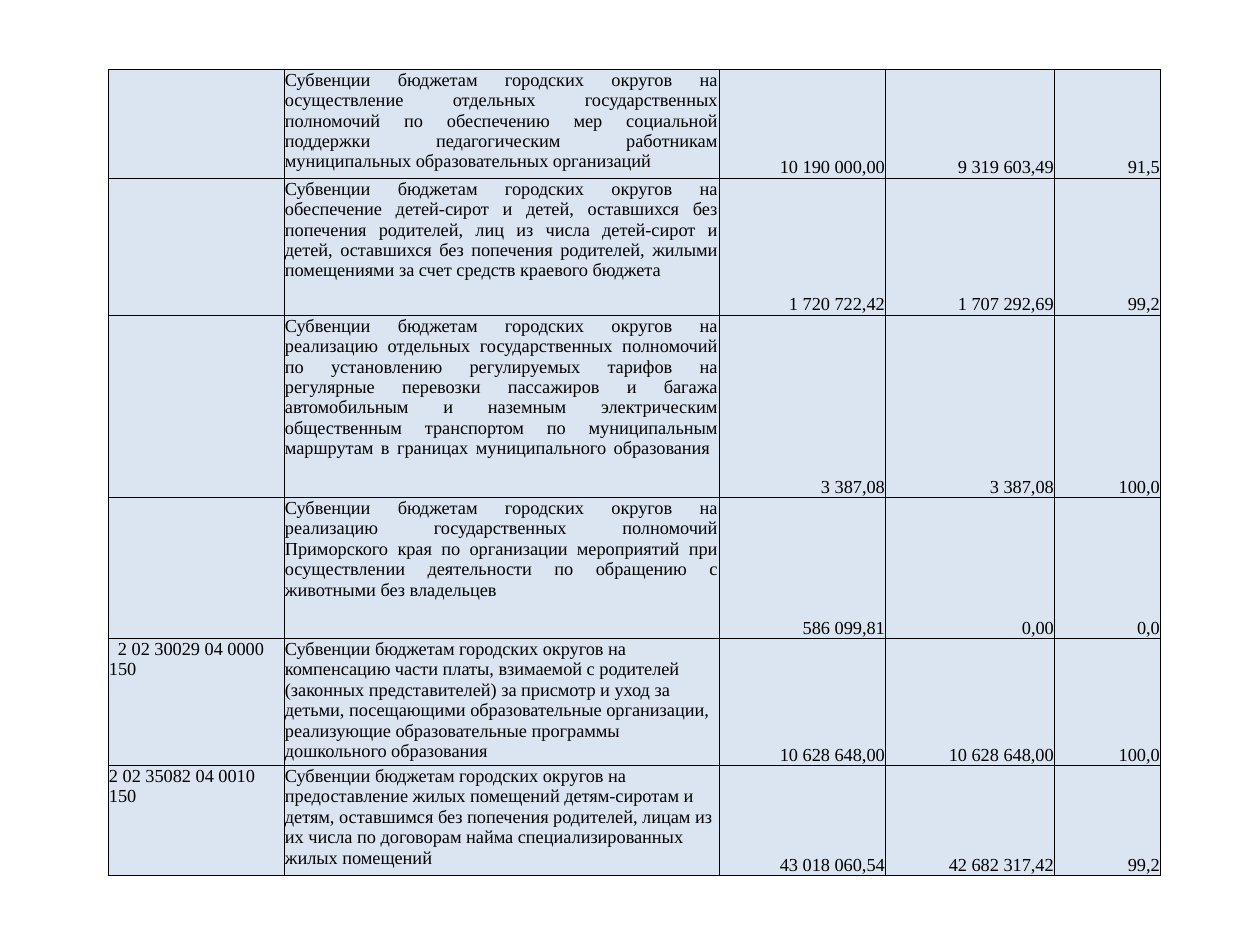
from lxml import etree
from pptx import Presentation
from pptx.dml.color import RGBColor
from pptx.enum.text import MSO_ANCHOR, PP_ALIGN
from pptx.oxml.ns import qn
from pptx.util import Pt

PX = 914400 // 126
LEFT, RIGHT, JUSTIFY = PP_ALIGN.LEFT, PP_ALIGN.RIGHT, PP_ALIGN.JUSTIFY
TOP, BOTTOM = MSO_ANCHOR.TOP, MSO_ANCHOR.BOTTOM
BLACK = RGBColor(0x00, 0x00, 0x00)
PALE_BLUE = RGBColor(0xDB, 0xE5, 0xF1)

COLUMN_WIDTHS = [176, 435, 167, 169, 106]
ROW_HEIGHTS = [109, 137, 182, 141, 127, 110]
CODE_INDENT = 9
INDENTED_ROW = 4

SUBVENTION = "Субвенции бюджетам городских округов на "
# Budget code, purpose, planned sum, actual sum, percent done
ROWS = [
    ("", "осуществление отдельных государственных полномочий по обеспечению мер "
     "социальной поддержки педагогическим работникам муниципальных "
     "образовательных организаций",
     "10 190 000,00", "9 319 603,49", "91,5"),
    ("", "обеспечение детей-сирот и детей, оставшихся без попечения родителей, "
     "лиц из числа детей-сирот и детей, оставшихся без попечения родителей, "
     "жилыми помещениями за счет средств краевого бюджета",
     "1 720 722,42", "1 707 292,69", "99,2"),
    ("", "реализацию отдельных государственных полномочий по установлению "
     "регулируемых тарифов на регулярные перевозки пассажиров и багажа "
     "автомобильным и наземным электрическим общественным транспортом по "
     "муниципальным маршрутам в границах муниципального образования \v",
     "3 387,08", "3 387,08", "100,0"),
    ("", "реализацию государственных полномочий Приморского края по организации "
     "мероприятий при осуществлении деятельности по обращению с животными "
     "без владельцев",
     "586 099,81", "0,00", "0,0"),
    ("2 02 30029 04 0000 150",
     "компенсацию части платы, взимаемой с родителей (законных представителей) "
     "за присмотр и уход за детьми, посещающими образовательные организации, "
     "реализующие образовательные программы дошкольного образования",
     "10 628 648,00", "10 628 648,00", "100,0"),
    ("2 02 35082 04 0010 150",
     "предоставление жилых помещений детям-сиротам и детям, оставшимся без "
     "попечения родителей, лицам из их числа по договорам найма "
     "специализированных жилых помещений",
     "43 018 060,54", "42 682 317,42", "99,2"),
]


class SlideBuilder:
    """Holds the text and table style and the current slide."""

    font = "Times New Roman"
    size = Pt(10.5)
    border = Pt(0.5)

    def __init__(self, slide):
        self.s = slide

    def table(self, left, top, widths, heights):
        frame = self.s.shapes.add_table(
            len(heights), len(widths), left * PX, top * PX,
            sum(widths) * PX, sum(heights) * PX)
        table = frame.table
        table.first_row = table.horz_banding = False
        for column, width in zip(table.columns, widths):
            column.width = width * PX
        for row, height in zip(table.rows, heights):
            row.height = height * PX
        return table

    def cell(self, cell, text, align=LEFT, anchor=TOP, indent=0):
        cell.margin_left = cell.margin_right = cell.margin_top = PX
        cell.margin_bottom = 0
        cell.vertical_anchor = anchor
        self.borders(cell)
        cell.fill.solid()
        cell.fill.fore_color.rgb = PALE_BLUE
        p = cell.text_frame.paragraphs[0]
        p.text = text
        p.alignment = align
        if indent:
            p._p.get_or_add_pPr().set("indent", str(indent * PX))
        for r in p.runs:
            r.font.name = self.font
            r.font.size = self.size
            r.font.color.rgb = BLACK

    def borders(self, cell):
        tc_pr = cell._tc.get_or_add_tcPr()
        for side in ("a:lnL", "a:lnR", "a:lnT", "a:lnB"):
            line = etree.SubElement(tc_pr, qn(side), w=str(self.border))
            fill = etree.SubElement(line, qn("a:solidFill"))
            etree.SubElement(fill, qn("a:srgbClr"), val=str(BLACK))


def main():
    prs = Presentation()
    prs.slide_width, prs.slide_height = 1260 * PX, 945 * PX
    builder = SlideBuilder(prs.slides.add_slide(prs.slide_layouts[6]))
    table = builder.table(108, 69, COLUMN_WIDTHS, ROW_HEIGHTS)
    for i, (code, purpose, *figures) in enumerate(ROWS):
        indent = CODE_INDENT if i == INDENTED_ROW else 0
        builder.cell(table.cell(i, 0), code, indent=indent)
        builder.cell(table.cell(i, 1), SUBVENTION + purpose,
                     align=LEFT if code else JUSTIFY)
        for j, figure in enumerate(figures, start=2):
            builder.cell(table.cell(i, j), figure, RIGHT, BOTTOM)
    prs.save("out.pptx")


if __name__ == "__main__":
    main()
